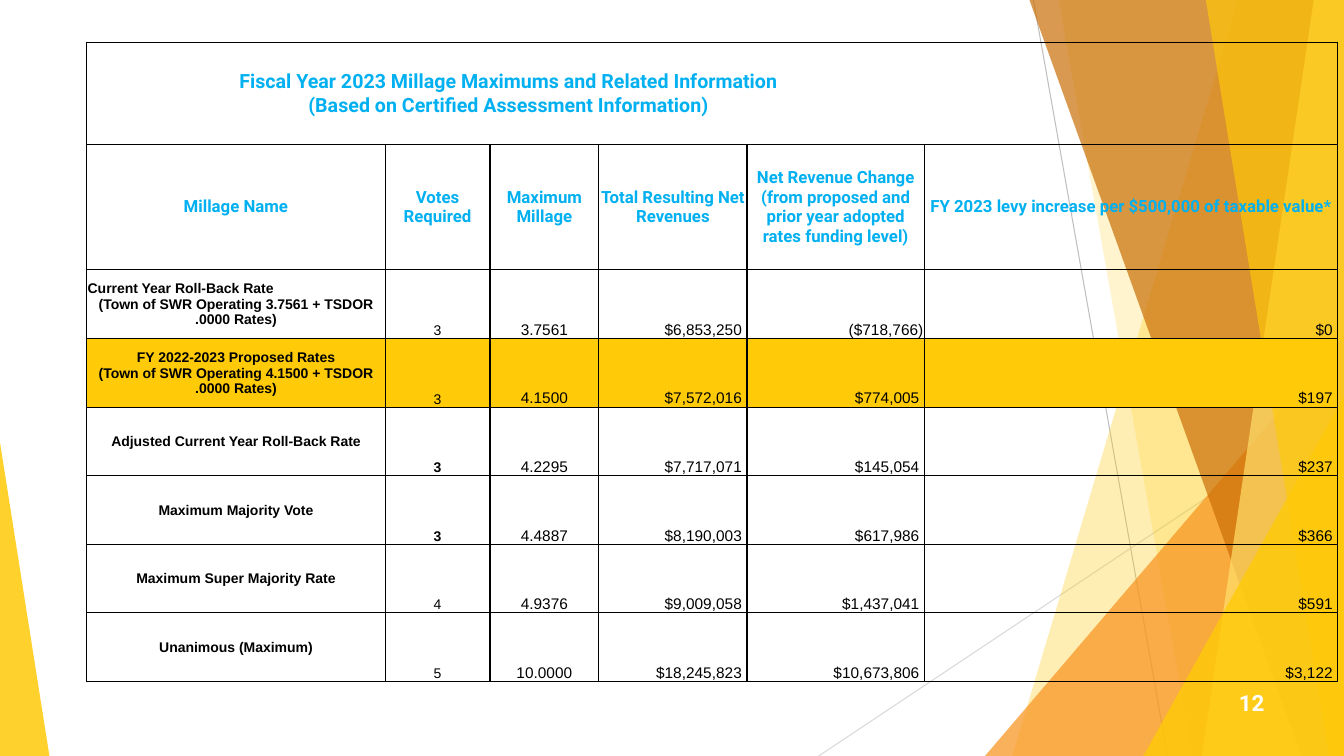
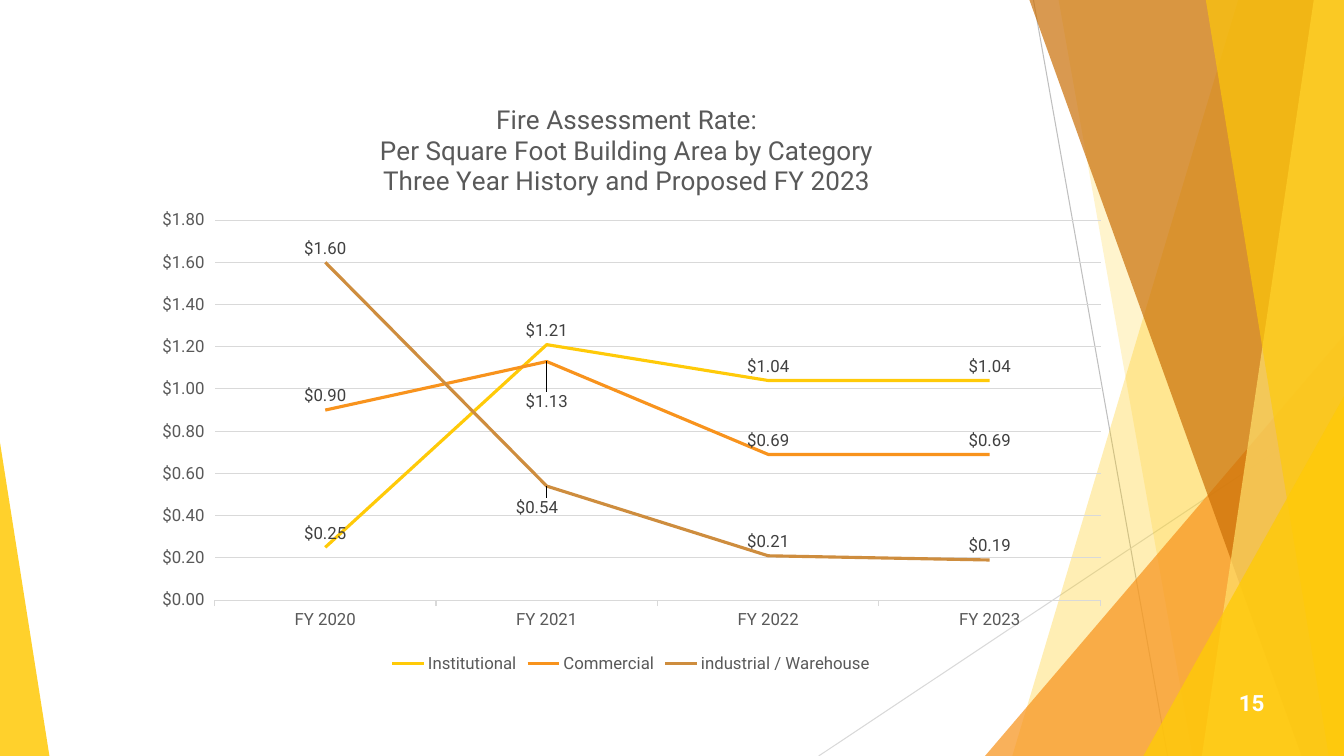
from typing import NamedTuple

from lxml import etree
from pptx import Presentation
from pptx.chart.data import CategoryChartData
from pptx.dml.color import RGBColor
from pptx.enum import chart as ch, shapes, text
from pptx.oxml import parse_xml
from pptx.oxml.ns import nsdecls, qn
from pptx.util import Inches, Pt

COLORS = {
    "gold": "FFCA08", "pale_gold": "FFDF6B", "orange": "F8931D", "brown": "CA6F06",
    "tan": "CE8D3E", "blue": "00B0F0", "black": "000000", "white": "FFFFFF",
    "grey": "595959", "dark": "404040", "mid": "BFBFBF", "light": "D9D9D9",
}
WIDTH, HEIGHT = 13.33, 7.5
DOLLARS = '"$"#,##0.00'
CENTER, LEFT, RIGHT = text.PP_ALIGN.CENTER, text.PP_ALIGN.LEFT, text.PP_ALIGN.RIGHT
MIDDLE, BOTTOM = text.MSO_ANCHOR.MIDDLE, text.MSO_ANCHOR.BOTTOM


class Ray(NamedTuple):
    x1: float
    y1: float
    x2: float
    y2: float
    color: str


class Ribbon(NamedTuple):
    """A band from a slanted left edge to the right side of the slide."""
    top_x: float
    bottom_x: float
    color: str
    opacity: int


class Corner(NamedTuple):
    """A right triangle standing on the bottom of the slide."""
    left: float
    top: float
    width: float
    apex: float
    color: str
    opacity: int


class Style(NamedTuple):
    size: float
    font: str = "Arial"
    color: str = "black"
    bold: bool = False


class Rate(NamedTuple):
    name: tuple[str, ...]
    votes: str
    amounts: tuple[str, ...]
    bold_votes: bool = False
    fill: str | None = None
    first_align: text.PP_ALIGN = CENTER


class Series(NamedTuple):
    name: str
    values: tuple[float, ...]
    color: str
    fy2021_shift: tuple[float, float] | None = None


RAYS = [Ray(10.25, 0, 11.58, HEIGHT, "mid"), Ray(WIDTH, 4.03, 8.12, HEIGHT, "light")]
FACETS = [
    Ribbon(12.28, 10.04, "gold", 30),
    Ribbon(10.5, 11.83, "gold", 20),
    Corner(9.77, 3.33, 3.56, 1, "orange", 72),
    Ribbon(10.21, 12.91, "brown", 70),
    Ribbon(13.03, 11.92, "pale_gold", 70),
    Ribbon(11.96, 13.18, "gold", 65),
    Corner(11.34, 3.93, 1.99, 1, "gold", 80),
    Corner(0, 4.39, 0.49, 0, "gold", 85),
]

TITLE = ("Fiscal Year 2023 Millage Maximums and Related Information",
         "(Based on Certified Assessment Information)")
HEADERS = ["Millage Name", "Votes Required", "Maximum Millage", "Total Resulting Net Revenues",
           "Net Revenue Change (from proposed and prior year adopted rates funding level)",
           "FY 2023 levy increase per $500,000 of taxable value*"]
COLUMN_WIDTHS = [2.96, 1.04, 1.08, 1.47, 1.76, 1.55]
ROW_HEIGHTS = [1.01, 1.24, 0.69] + [0.68] * 5
RATES = [
    Rate(("Current Year Roll-Back Rate", "(Town of SWR Operating 3.7561 + TSDOR .0000 Rates)"),
         "3", ("3.7561", "$6,853,250", "($718,766)", "$0"), first_align=LEFT),
    Rate(("FY 2022-2023 Proposed Rates", "(Town of SWR Operating 4.1500 + TSDOR .0000 Rates)"),
         "3", ("4.1500", "$7,572,016", "$774,005", "$197"), fill="gold"),
    Rate(("Adjusted Current Year Roll-Back Rate",),
         "3", ("4.2295", "$7,717,071", "$145,054", "$237"), bold_votes=True),
    Rate(("Maximum Majority Vote",),
         "3", ("4.4887", "$8,190,003", "$617,986", "$366"), bold_votes=True),
    Rate(("Maximum Super Majority Rate",), "4", ("4.9376", "$9,009,058", "$1,437,041", "$591")),
    Rate(("Unanimous (Maximum)",), "5", ("10.0000", "$18,245,823", "$10,673,806", "$3,122")),
]

YEARS = ["FY 2020", "FY 2021", "FY 2022", "FY 2023"]
CHART_TITLE = ("Fire Assessment Rate:", "Per Square Foot Building Area by Category",
               "Three Year History and Proposed FY 2023")
SERIES = [
    Series("Institutional", (0.25, 1.21, 1.04, 1.04), "gold"),
    Series("Commercial", (0.9, 1.13, 0.69, 0.69), "orange", (0, 0.09)),
    Series("industrial / Warehouse", (1.6, 0.54, 0.21, 0.19), "tan", (-0.01, 0.06)),
]


def rgb(name: str) -> RGBColor:
    return RGBColor.from_string(COLORS[name])


def set_font(font, style: Style) -> None:
    font.name, font.size, font.bold = style.font, Pt(style.size), style.bold
    font.color.rgb = rgb(style.color)


def write(tf, lines: tuple[str, ...], style: Style, align=CENTER) -> None:
    for i, line in enumerate(lines):
        p = tf.paragraphs[0] if i == 0 else tf.add_paragraph()
        p.text, p.alignment = line, align
        set_font(p.font, style)


def draw_ray(s, ray: Ray) -> None:
    line = s.shapes.add_connector(shapes.MSO_CONNECTOR.STRAIGHT, Inches(ray.x1), Inches(ray.y1),
                                  Inches(ray.x2), Inches(ray.y2))
    line.line.color.rgb, line.line.width = rgb(ray.color), Pt(0.75)
    etree.SubElement(line._element.spPr, qn("a:effectLst"))


def draw_facet(s, facet: Ribbon | Corner) -> None:
    if isinstance(facet, Ribbon):
        builder = s.shapes.build_freeform(Inches(facet.top_x), 0)
        edge = [(WIDTH, 0), (WIDTH, HEIGHT), (facet.bottom_x, HEIGHT)]
        builder.add_line_segments([(Inches(x), Inches(y)) for x, y in edge])
        sp = builder.convert_to_shape()
    else:
        sp = s.shapes.add_shape(shapes.MSO_SHAPE.ISOSCELES_TRIANGLE, Inches(facet.left),
                                Inches(facet.top), Inches(facet.width),
                                Inches(HEIGHT - facet.top))
        sp.adjustments[0] = facet.apex
    sp.shadow.inherit = False
    sp.line.fill.background()
    sp.fill.solid()
    sp.fill.fore_color.rgb = rgb(facet.color)
    color = sp._element.spPr.find(qn("a:solidFill"))[0]
    etree.SubElement(color, qn("a:alpha"), val=str(facet.opacity * 1000))


def add_base_slide(prs, number: int):
    """Add a slide with the faceted backdrop and its page number."""
    s = prs.slides.add_slide(prs.slide_layouts[6])
    for ray in RAYS:
        draw_ray(s, ray)
    for facet in FACETS:
        draw_facet(s, facet)
    tf = s.shapes.add_textbox(Inches(11.89), Inches(6.77), Inches(0.75), Inches(0.4)).text_frame
    tf.word_wrap, tf.vertical_anchor = True, MIDDLE
    write(tf, (str(number),), Style(16, "Roboto", "white", True), RIGHT)
    return s


def format_cell(cell, fill: str | None = None) -> None:
    cell.margin_left = cell.margin_right = cell.margin_top = Inches(0.01)
    cell.margin_bottom = 0
    if fill:
        cell.fill.solid()
        cell.fill.fore_color.rgb = rgb(fill)
    else:
        cell.fill.background()
    tc_pr = cell._tc.get_or_add_tcPr()
    for i, side in enumerate("LRTB"):
        tc_pr.insert(i, parse_xml(
            f'<a:ln{side} {nsdecls("a")} w="12700"><a:solidFill>'
            f'<a:srgbClr val="{COLORS["black"]}"/></a:solidFill></a:ln{side}>'))


def fill_rate_row(cells: list, rate: Rate) -> None:
    name, votes, *amounts = cells
    for cell in cells:
        format_cell(cell, rate.fill)
        cell.vertical_anchor = BOTTOM
    name.vertical_anchor = MIDDLE
    write(name.text_frame, rate.name, Style(10, bold=True))
    name.text_frame.paragraphs[0].alignment = rate.first_align
    write(votes.text_frame, (rate.votes,), Style(10, bold=rate.bold_votes))
    for i, (cell, amount) in enumerate(zip(amounts, rate.amounts)):
        write(cell.text_frame, (amount,), Style(11), RIGHT if i else CENTER)
        if i and not amount.endswith(")"):
            cell.margin_right = Inches(0.05)


def add_millage_table(s) -> None:
    table = s.shapes.add_table(len(ROW_HEIGHTS), len(COLUMN_WIDTHS), Inches(0.86), Inches(0.42),
                               Inches(sum(COLUMN_WIDTHS)), Inches(sum(ROW_HEIGHTS))).table
    table.first_row = table.horz_banding = False
    for column, width in zip(table.columns, COLUMN_WIDTHS):
        column.width = Inches(width)
    for row, height in zip(table.rows, ROW_HEIGHTS):
        row.height = Inches(height)
    title_row, header_row, *rate_rows = [list(row.cells) for row in table.rows]
    for cell in title_row + header_row:
        format_cell(cell)
        cell.vertical_anchor = MIDDLE
    title = title_row[0]
    title.merge(title_row[-1])
    title.margin_right = Inches(4.05)
    write(title.text_frame, TITLE, Style(14, "Roboto", "blue", True))
    for cell, header in zip(header_row, HEADERS):
        write(cell.text_frame, (header,), Style(12, "Roboto", "blue", True))
    for cells, rate in zip(rate_rows, RATES):
        fill_rate_row(cells, rate)


def manual_layout(x: float, y: float, size: tuple[float, float] | None = None,
                  edge: bool = True):
    """Build a chart layout; without edge, x and y shift the default place."""
    parts = ['<c:layoutTarget val="inner"/>'] if size else []
    if edge:
        parts.append('<c:xMode val="edge"/><c:yMode val="edge"/>')
    parts.append(f'<c:x val="{x}"/><c:y val="{y}"/>')
    if size:
        parts.append(f'<c:w val="{size[0]}"/><c:h val="{size[1]}"/>')
    return parse_xml(f'<c:layout {nsdecls("c")}><c:manualLayout>{"".join(parts)}'
                     '</c:manualLayout></c:layout>')


def set_layout(element, layout, index: int) -> None:
    for old in element.findall(qn("c:layout")):
        element.remove(old)
    element.insert(index, layout)


def format_series(plot_series, spec: Series) -> None:
    plot_series.smooth = False
    plot_series.marker.style = ch.XL_MARKER_STYLE.NONE
    plot_series.format.line.color.rgb = rgb(spec.color)
    plot_series.format.line.width = Pt(2.25)
    label_style = Style(12, "Roboto", "dark")
    labels = plot_series.data_labels
    labels.show_value, labels.position = True, ch.XL_LABEL_POSITION.ABOVE
    labels.number_format, labels.number_format_is_linked = DOLLARS, False
    set_font(labels.font, label_style)
    if spec.fy2021_shift:
        label = plot_series.points[1].data_label
        label.position = ch.XL_LABEL_POSITION.ABOVE
        set_font(label.font, label_style)
        element = labels._element.find(qn("c:dLbl"))
        set_layout(element, manual_layout(*spec.fy2021_shift, edge=False), 1)


def add_rate_chart(s) -> None:
    data = CategoryChartData(number_format=DOLLARS)
    data.categories = YEARS
    for spec in SERIES:
        data.add_series(spec.name, spec.values)
    chart = s.shapes.add_chart(ch.XL_CHART_TYPE.LINE, Inches(1.41), Inches(0.79), Inches(9.7),
                               Inches(5.93), data).chart
    axis_style = Style(12, "Roboto", "grey")
    set_font(chart.font, axis_style)
    write(chart.chart_title.text_frame, CHART_TITLE, Style(18.6, "Roboto", "grey"))
    set_layout(chart.chart_title._element, manual_layout(0.24, 0.035), 1)
    chart.chart_title.include_in_layout = False
    plot_area = chart._chartSpace.chart.plotArea
    set_layout(plot_area, manual_layout(0.074, 0.235, (0.906, 0.636)), 0)

    chart.has_legend = True
    chart.legend.position = ch.XL_LEGEND_POSITION.BOTTOM
    chart.legend.include_in_layout = False
    set_font(chart.legend.font, axis_style)

    years, dollars = chart.category_axis, chart.value_axis
    for axis in (years, dollars):
        axis.major_tick_mark = ch.XL_TICK_MARK.OUTSIDE
        set_font(axis.tick_labels.font, axis_style)
    dollars.minimum_scale, dollars.maximum_scale, dollars.major_unit = 0, 1.8, 0.2
    dollars.tick_labels.number_format = DOLLARS
    dollars.tick_labels.number_format_is_linked = False
    dollars.format.line.fill.background()
    for line in (years.format.line, dollars.major_gridlines.format.line):
        line.color.rgb, line.width = rgb("light"), Pt(0.75)

    chart.plots[0].vary_by_categories = False
    for plot_series, spec in zip(chart.plots[0].series, SERIES):
        format_series(plot_series, spec)


def main() -> None:
    prs = Presentation()
    prs.slide_width, prs.slide_height = Inches(WIDTH), Inches(HEIGHT)
    add_millage_table(add_base_slide(prs, 12))
    add_rate_chart(add_base_slide(prs, 15))
    prs.save("out.pptx")


if __name__ == "__main__":
    main()
